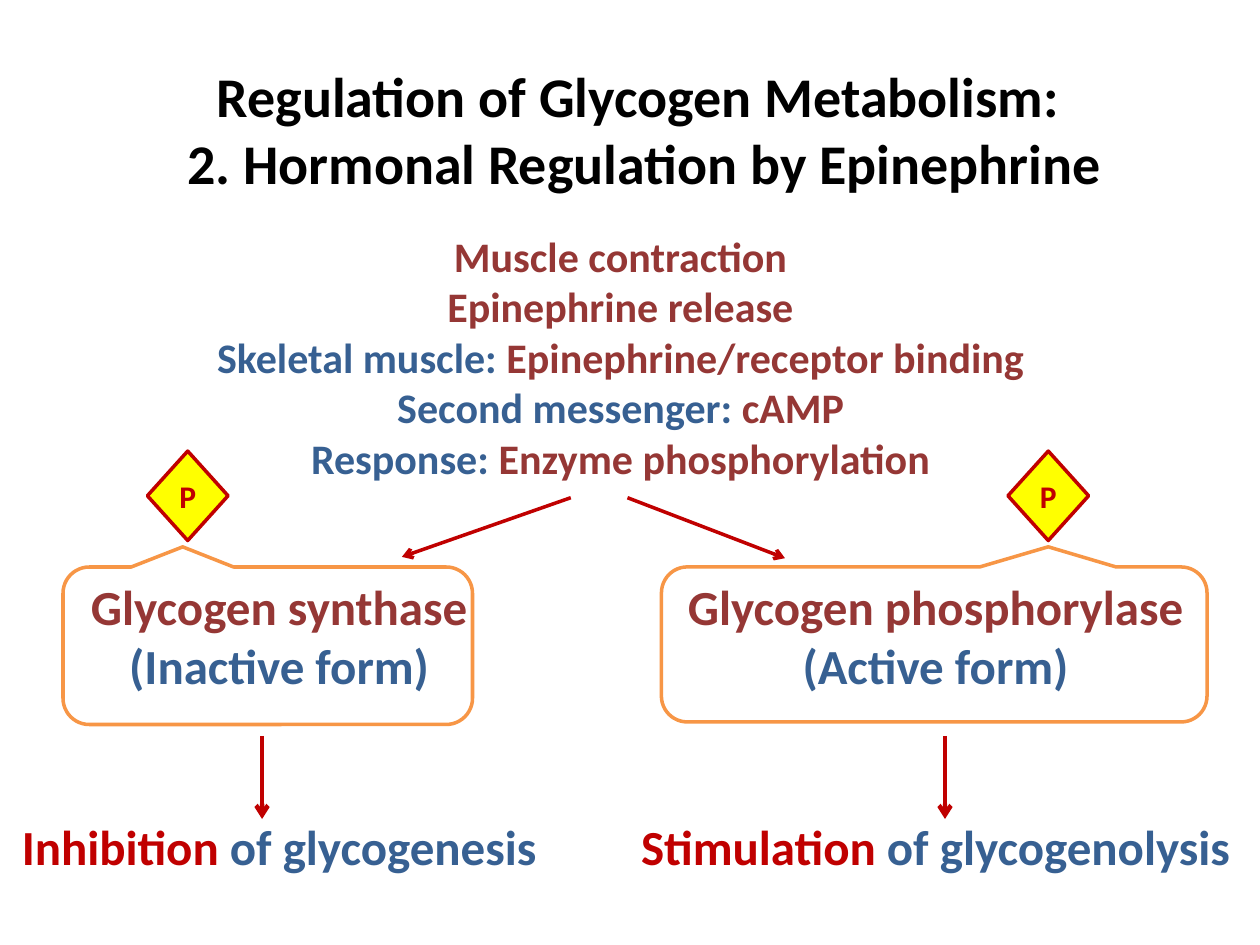
from lxml import etree
from pptx import Presentation
from pptx.dml.color import RGBColor
from pptx.enum import shapes, text
from pptx.oxml.ns import qn
from pptx.util import Inches, Pt

COLORS = {"black": "000000", "maroon": "953735", "blue": "376092",
          "red": "C00000", "orange": "F79646", "yellow": "FFFF00"}

# Content: each line is a list of (text, colour) runs
TITLE = [[("Regulation of Glycogen Metabolism:", "black")],
         [(" 2. Hormonal Regulation by Epinephrine", "black")]]
CASCADE = [
    [("Muscle contraction", "maroon")],
    [("Epinephrine release", "maroon")],
    [("Skeletal muscle: ", "blue"), ("Epinephrine/receptor binding", "maroon")],
    [("Second messenger: ", "blue"), ("cAMP", "maroon")],
    [("Response: ", "blue"), ("Enzyme phosphorylation", "maroon")],
]
BRANCHES = [
    {"enzyme": "Glycogen synthase", "form": "(Inactive form)",
     "effect": "Inhibition ", "process": "of glycogenesis",
     "text_box": (0.05, 4.33), "callout": (0.5, 4.5, 3.25, 1.25),
     "tip_x": 1.45, "diamond_x": 1.17, "arrow_x": 2.08,
     "split": (4.53, 3.95, 3.19, 4.42)},
    {"enzyme": "Glycogen phosphorylase", "form": "(Active form)",
     "effect": "Stimulation ", "process": "of glycogenolysis",
     "text_box": (4.96, 4.93), "callout": (5.25, 4.5, 4.33, 1.23),
     "tip_x": 8.32, "diamond_x": 8, "arrow_x": 7.5,
     "split": (4.98, 3.95, 6.23, 4.43)},
]
ENZYME_TOP, EFFECT_TOP = 4.53, 6.43
TIP_Y = 4.34


def rgb(name):
    return RGBColor.from_string(COLORS[name])


def write(shape, lines, size, anchor=text.MSO_ANCHOR.TOP, inset=None):
    frame = shape.text_frame
    frame.word_wrap = False
    frame.auto_size = text.MSO_AUTO_SIZE.NONE
    frame.vertical_anchor = anchor
    if inset is not None:
        frame.margin_left = frame.margin_right = Inches(inset)
        frame.margin_top = frame.margin_bottom = Inches(inset)
    for i, line in enumerate(lines):
        paragraph = frame.paragraphs[0] if i == 0 else frame.add_paragraph()
        paragraph.alignment = text.PP_ALIGN.CENTER
        paragraph.space_before = Pt(0)
        for words, color in line:
            run = paragraph.add_run()
            run.text = words
            run.font.name = "Calibri"
            run.font.size = Pt(size)
            run.font.bold = True
            run.font.color.rgb = rgb(color)


def place(shape, *box):
    shape.left, shape.top, shape.width, shape.height = map(Inches, box)


def add_outline(slide, preset, box, line, fill=None):
    shape = slide.shapes.add_shape(preset, *map(Inches, box))
    shape.shadow.inherit = False
    if fill:
        shape.fill.solid()
        shape.fill.fore_color.rgb = rgb(fill)
    else:
        shape.fill.background()
    shape.line.color.rgb = rgb(line)
    shape.line.width = Pt(2)
    return shape


def add_arrow(slide, ends, width):
    arrow = slide.shapes.add_connector(
        shapes.MSO_CONNECTOR.STRAIGHT, *map(Inches, ends))
    arrow.line.color.rgb = rgb("red")
    arrow.line.width = Pt(width)
    properties = arrow.line._get_or_add_ln()
    etree.SubElement(properties, qn("a:tailEnd"), type="arrow")
    etree.SubElement(properties.getparent(), qn("a:effectLst"))


def main():
    deck = Presentation()
    deck.slide_width, deck.slide_height = Inches(10), Inches(7.5)
    slide = deck.slides.add_slide(deck.slide_layouts[1])

    # Title and signalling cascade
    title, cascade = slide.placeholders
    place(title, 1.19, 0.44, 7.75, 1.18)
    write(title, TITLE, 32)
    place(cascade, 1.59, 1.78, 6.67, 2.12)
    write(cascade, CASCADE, 24)
    for paragraph in cascade.text_frame.paragraphs:
        layout = paragraph._p.get_or_add_pPr()
        layout.set("marL", "0")
        layout.set("indent", "0")
        etree.SubElement(layout, qn("a:buNone"))

    for branch in BRANCHES:
        # Enzyme and its metabolic effect
        left, width = branch["text_box"]
        enzyme = slide.shapes.add_textbox(
            *map(Inches, (left, ENZYME_TOP, width, 1.04)))
        write(enzyme, [[(branch["enzyme"], "maroon")],
                       [(branch["form"], "blue")]], 28)
        effect = slide.shapes.add_textbox(
            *map(Inches, (left, EFFECT_TOP, width, 0.57)))
        write(effect, [[(branch["effect"], "red"),
                        (branch["process"], "blue")]], 28)

        # Callout whose tip points up at the phosphate
        x, y, w, h = branch["callout"]
        callout = add_outline(
            slide, shapes.MSO_SHAPE.ROUNDED_RECTANGULAR_CALLOUT,
            branch["callout"], "orange")
        callout.adjustments[0] = (branch["tip_x"] - x - w / 2) / w
        callout.adjustments[1] = (TIP_Y - y - h / 2) / h

        # Phosphate group
        phosphate = add_outline(
            slide, shapes.MSO_SHAPE.DIAMOND,
            (branch["diamond_x"], 3.58, 0.64, 0.71), "red", "yellow")
        write(phosphate, [[("P", "red")]], 18,
              anchor=text.MSO_ANCHOR.MIDDLE, inset=0)

        # Arrows to the enzyme and on to its effect
        add_arrow(slide, branch["split"], 2)
        add_arrow(slide, (branch["arrow_x"], 5.84, branch["arrow_x"], 6.5), 2.5)

    deck.save("out.pptx")


if __name__ == "__main__":
    main()
